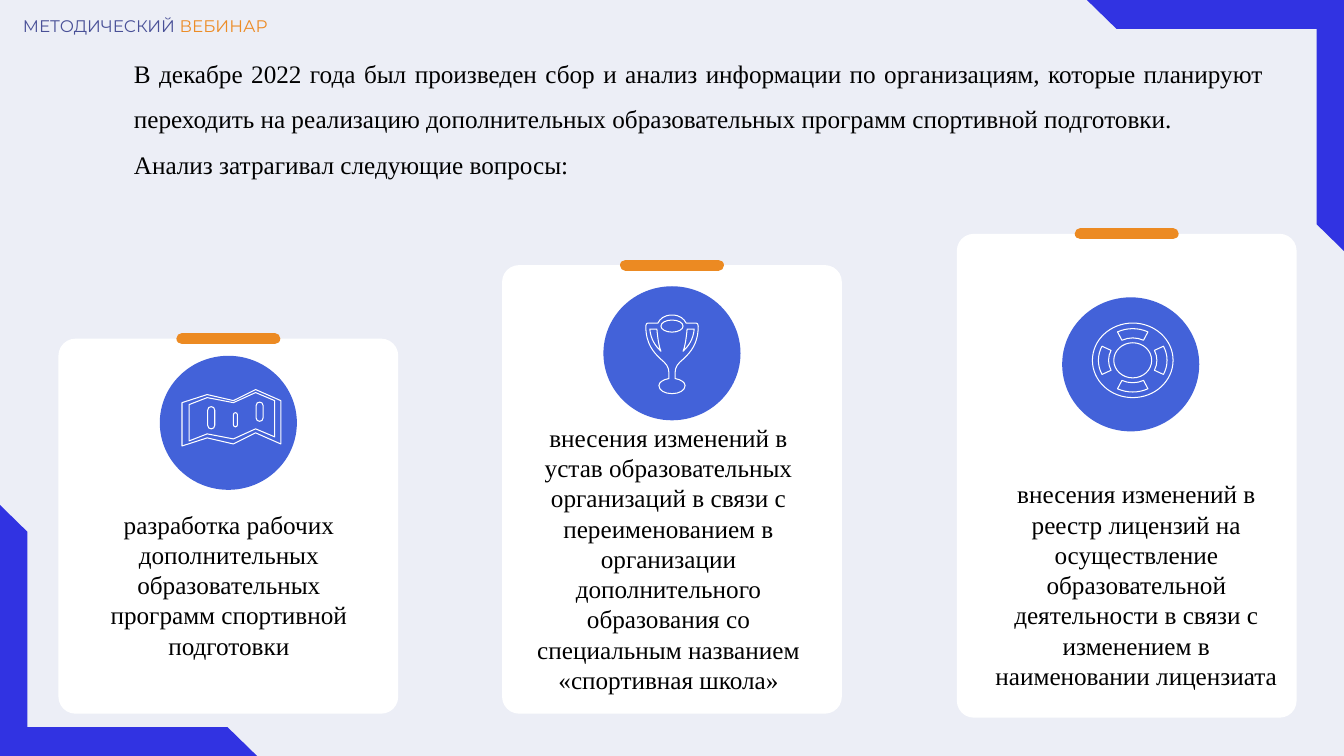
from math import cos, pi, sin, tan

from lxml.etree import Element, SubElement
from pptx import Presentation
from pptx.dml.color import RGBColor
from pptx.enum.shapes import MSO_CONNECTOR, MSO_SHAPE as Shape
from pptx.enum.text import MSO_AUTO_SIZE as AutoSize, PP_ALIGN as Align
from pptx.oxml.ns import qn
from pptx.util import Inches, Pt

WIDTH, HEIGHT = 13.33, 7.5
CARD_WIDTH, BAR_WIDTH = 3.37, 0.92
CIRCLE_WIDTH, CIRCLE_HEIGHT = 1.36, 1.33
FRAME_WIDTH, FRAME_HEIGHT = 2.49, 2.55
TEXT_WIDTH = 3.08
UNITS = 1000  # freeform units in an inch

BLUE, ICON_BLUE, ORANGE = "3133E2", "4362D9", "EC8A22"
WHITE, BLACK = "FFFFFF", "000000"
BODY = {"name": "Times New Roman", "size": Pt(18)}
HEADER = {"name": "Montserrat", "size": Pt(12)}


def colour(value):
    return RGBColor.from_string(value)


def apply(target, values):
    for name, value in values.items():
        setattr(target, name, value)


# Elements
def add_box(shapes, kind, box, fill, adjustments=(), rotation=0):
    shape = shapes.add_shape(kind, *map(Inches, box))
    shape.shadow.inherit = False
    shape.fill.solid()
    shape.fill.fore_color.rgb = colour(fill)
    shape.line.fill.background()
    for index, value in enumerate(adjustments):
        shape.adjustments[index] = value
    shape.rotation = rotation


def add_text(shapes, box, paragraphs, font, layout):
    """Each paragraph is a list of (text, colour) runs."""
    frame = shapes.add_textbox(*map(Inches, box)).text_frame
    apply(frame, {"word_wrap": True, "auto_size": AutoSize.SHAPE_TO_FIT_TEXT})
    for index, runs in enumerate(paragraphs):
        paragraph = frame.add_paragraph() if index else frame.paragraphs[0]
        apply(paragraph, layout)
        for text, text_colour in runs:
            run = paragraph.add_run()
            run.text = text
            apply(run.font, font)
            run.font.color.rgb = colour(text_colour)


def add_bar(shapes, centre, top):
    bar = shapes.add_connector(
        MSO_CONNECTOR.STRAIGHT, Inches(centre - BAR_WIDTH / 2), Inches(top),
        Inches(centre + BAR_WIDTH / 2), Inches(top))
    bar.line.color.rgb = colour(ORANGE)
    bar.line.width = Pt(8)
    bar.line._get_or_add_ln().set("cap", "rnd")
    SubElement(bar._element.spPr, qn("a:effectLst"))


def add_icon(shapes, contours, x, y):
    """Draw closed contours of corners (pairs) and cubic curves (six numbers)."""
    def place(part):
        return [((x + dx) * UNITS, (y + dy) * UNITS)
                for dx, dy in zip(part[::2], part[1::2])]

    builder = shapes.build_freeform(*place(contours[0][0])[0], scale=Inches(1) / UNITS)
    for index, contour in enumerate(contours):
        if index:
            builder.move_to(*place(contour[0])[0])
        builder.add_line_segments(
            [point for part in contour[1:] for point in place(part)], close=True)
    icon = builder.convert_to_shape()

    # Join each curve's three points into one cubic segment
    lines = iter(list(icon._element.iter(qn("a:lnTo"))))
    for part in (part for contour in contours for part in contour[1:]):
        group = [next(lines) for _ in place(part)]
        if len(group) == 3:
            curve = Element(qn("a:cubicBezTo"))
            group[0].addprevious(curve)
            for line in group:
                curve.append(line[0])
                line.getparent().remove(line)

    icon.shadow.inherit = False
    icon.fill.background()
    icon.line.color.rgb = colour(WHITE)
    icon.line.width = Pt(0.75)


# Icon geometry
def arc(x, y, rx, ry, start, end, pieces=1):
    step = (end - start) / pieces
    pull = 4 / 3 * tan(step / 4)
    parts = [(x + rx * cos(start), y + ry * sin(start))]
    for index in range(pieces):
        a, b = start + index * step, start + (index + 1) * step
        parts.append((x + rx * (cos(a) - pull * sin(a)), y + ry * (sin(a) + pull * cos(a)),
                      x + rx * (cos(b) + pull * sin(b)), y + ry * (sin(b) - pull * cos(b)),
                      x + rx * cos(b), y + ry * sin(b)))
    return parts


def mirror(contour):
    """Flip left to right and run the other way."""
    x, y = contour[-1][-2:]
    parts = [(-x, y)]
    for before, part in zip(contour[-2::-1], contour[:0:-1]):
        x, y = before[-2:]
        controls = (-part[2], part[3], -part[0], part[1]) if len(part) == 6 else ()
        parts.append((*controls, -x, y))
    return parts


def map_icon():
    def band(ridge, depth):
        return ridge + [(x, y + depth) for x, y in reversed(ridge)]

    def slot(x, y, width, height):
        radius = width / 2
        reach = height / 2 - radius
        return (arc(x, y - reach, radius, radius, pi, 2 * pi)
                + arc(x, y + reach, radius, radius, 0, pi))

    outer = [(-0.46, -0.2), (-0.21, -0.28), (0.05, -0.22), (0.27, -0.33), (0.52, -0.22)]
    inner = [(-0.39, -0.18), (-0.21, -0.25), (0.05, -0.2), (0.27, -0.3), (0.46, -0.22)]
    return [band(outer, 0.43), band(inner, 0.36), slot(-0.17, -0.05, 0.07, 0.22),
            slot(0.07, -0.03, 0.04, 0.14), slot(0.31, -0.11, 0.07, 0.19)]


def trophy_icon():
    side = [(0, -0.38), (0.08, -0.38, 0.12, -0.34, 0.14, -0.3), (0.24, -0.3),
            (0.25, -0.3, 0.26, -0.29, 0.26, -0.27),
            (0.26, -0.09, 0.18, -0.01, 0.12, 0.05),
            (0.06, 0.1, 0.03, 0.13, 0.03, 0.2), (0.03, 0.25),
            (0.09, 0.26, 0.13, 0.29, 0.13, 0.32),
            (0.13, 0.37, 0.07, 0.4, 0, 0.4)]
    handle = [(0.11, -0.02), (0.13, -0.07, 0.14, -0.14, 0.15, -0.24),
              (0.22, -0.24), (0.21, -0.13, 0.16, -0.07, 0.11, -0.02)]
    rim = arc(0, -0.27, 0.11, 0.06, 0, 2 * pi, 4)
    return [side + mirror(side)[1:], handle, mirror(handle), rim]


def lifebuoy_icon():
    def ring(share, start=0, end=2 * pi, pieces=4):
        return arc(0.02, -0.04, 0.4 * share, 0.37 * share, start, end, pieces)

    half = 0.46
    segments = [ring(0.85, middle - half, middle + half, 1)
                + ring(0.6, middle + half, middle - half, 1)
                for middle in (quarter * pi / 2 for quarter in range(4))]
    return [ring(1), ring(0.47)] + segments


def add_card(slide, left, top, height, circle, text_at, text, icon):
    """circle is (shift from the card's middle, top); text_at is (inset, top, height)."""
    centre = left + CARD_WIDTH / 2
    inset, text_top, text_height = text_at
    card = slide.shapes.add_group_shape().shapes
    add_box(card, Shape.ROUNDED_RECTANGLE, (left, top, CARD_WIDTH, height), WHITE, [0.05])
    add_bar(card, centre, top)
    add_text(card, (left + inset, text_top, TEXT_WIDTH, text_height),
             [[(text, BLACK)]], BODY, {"alignment": Align.CENTER})

    shift, circle_top = circle
    middle = centre + shift
    add_box(slide.shapes, Shape.OVAL, (middle - CIRCLE_WIDTH / 2, circle_top,
                                      CIRCLE_WIDTH, CIRCLE_HEIGHT), ICON_BLUE)
    add_icon(slide.shapes, icon, middle, circle_top + CIRCLE_HEIGHT / 2)


def main():
    presentation = Presentation()
    presentation.slide_width, presentation.slide_height = Inches(WIDTH), Inches(HEIGHT)
    slide = presentation.slides.add_slide(presentation.slide_layouts[6])
    slide.background.fill.solid()
    slide.background.fill.fore_color.rgb = colour("ECEEF6")

    # Header and corner frames, which swap width and height when turned
    add_text(slide.shapes, (0.13, 0.11, 2.63, 0.5),
             [[("МЕТОДИЧЕСКИЙ ", "495097"), ("ВЕБИНАР", "EC8C26")]], HEADER, {})
    overhang = (FRAME_HEIGHT - FRAME_WIDTH) / 2
    for left, top, rotation in (
            (WIDTH - FRAME_WIDTH - overhang, -overhang, 90),
            (overhang, HEIGHT - FRAME_HEIGHT + overhang, 270)):
        add_box(slide.shapes, Shape.HALF_FRAME, (left, top, FRAME_WIDTH, FRAME_HEIGHT),
                BLUE, [0.109, 0.115], rotation)

    # Introduction
    introduction = (
        "В декабре 2022 года был произведен сбор и анализ информации по организациям, "
        "которые планируют переходить на реализацию дополнительных образовательных "
        "программ спортивной подготовки.",
        "Анализ затрагивал следующие вопросы:")
    add_text(slide.shapes, (1.23, 0.38, 11.4, 1.42),
             [[(text, BLACK)] for text in introduction], BODY,
             {"alignment": Align.JUSTIFY, "line_spacing": 1.5})

    # Cards
    add_card(slide, 0.58, 3.36, 3.72, (0, 3.53), (0.15, 5, 1.62),
             "разработка рабочих дополнительных образовательных программ "
             "спортивной подготовки", map_icon())
    add_card(slide, 4.98, 2.63, 4.45, (0, 2.84), (0.11, 4.14, 2.83),
             "внесения изменений в устав образовательных организаций в связи с "
             "переименованием в организации дополнительного образования со "
             "специальным названием «спортивная школа»", trophy_icon())
    add_card(slide, 9.49, 2.32, 4.8, (0.04, 2.95), (0.24, 4.7, 2.22),
             "внесения изменений в реестр лицензий на осуществление образовательной "
             "деятельности в связи с изменением в наименовании лицензиата",
             lifebuoy_icon())

    presentation.save("out.pptx")


if __name__ == "__main__":
    main()
